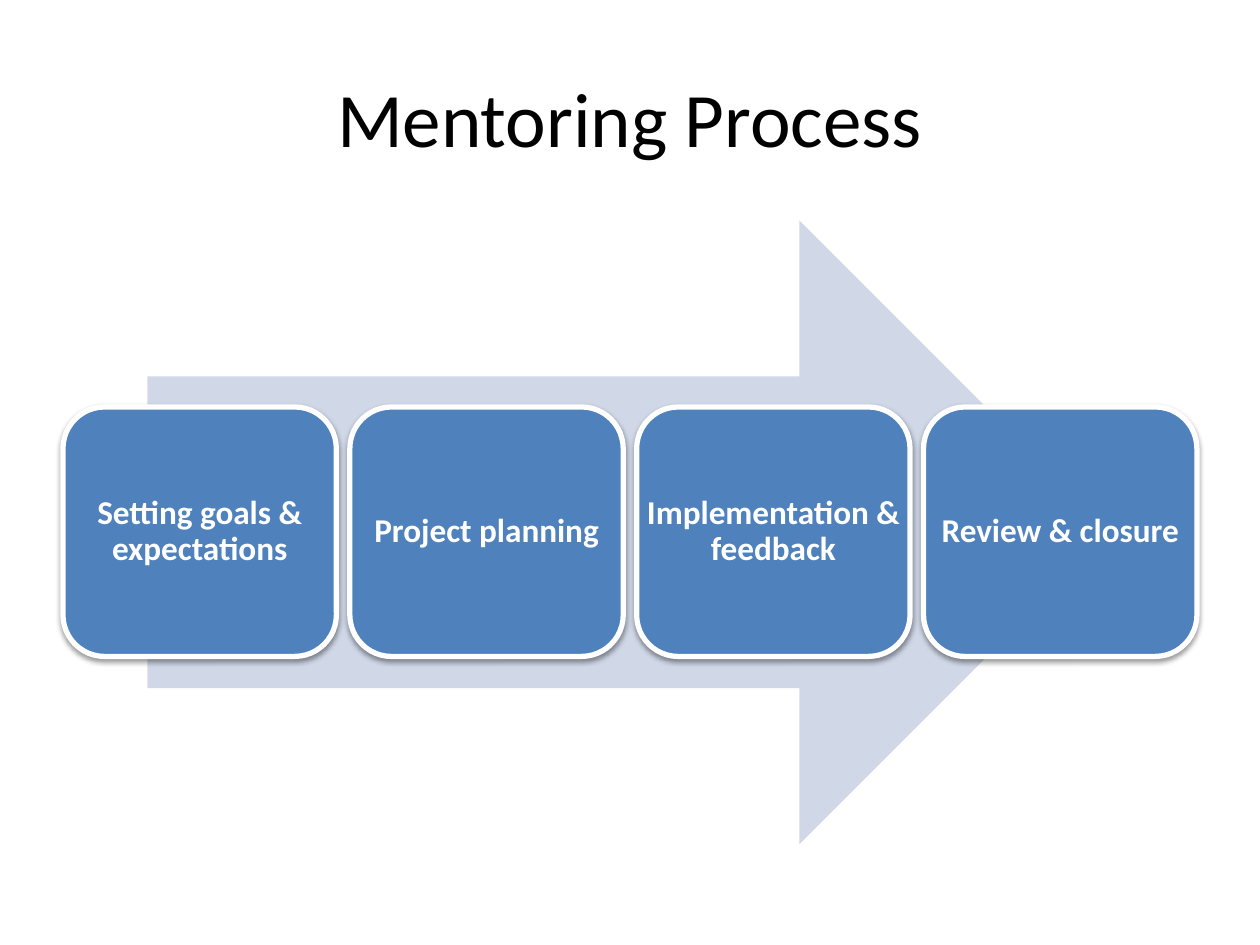
from dataclasses import dataclass

from lxml import etree
from pptx import Presentation
from pptx import util as u
from pptx.dml.color import RGBColor
from pptx.enum import shapes, text
from pptx.oxml import ns


@dataclass(frozen=True)
class Theme:
    """Colours, font and type sizes."""
    font: str = "Calibri"
    ink: str = "000000"
    paper: str = "FFFFFF"
    arrow: str = "D0D8E8"
    card: str = "4F81BD"
    head: int = 44
    label: int = 19


def write(frame, words, *, font, size, color, bold=False, space=1.0, pad=0.1):
    """Fill a text frame with one centred paragraph."""
    frame.word_wrap = True
    frame.vertical_anchor = text.MSO_ANCHOR.MIDDLE
    frame.margin_left = frame.margin_right = u.Inches(pad)
    frame.margin_top = frame.margin_bottom = u.Inches(pad)
    para = frame.paragraphs[0]
    para.alignment = text.PP_ALIGN.CENTER
    para.line_spacing = space
    run = para.add_run()
    run.text = words
    run.font.name = font
    run.font.size = u.Pt(size)
    run.font.bold = bold
    run.font.color.rgb = RGBColor.from_string(color)


def shade(shape, color, alpha, blur, dist):
    """Add a soft shadow that falls straight down."""
    list_ = etree.SubElement(shape._element.spPr, ns.qn("a:effectLst"))
    outer = etree.SubElement(
        list_, ns.qn("a:outerShdw"), blurRad=str(u.Pt(blur)),
        dist=str(u.Pt(dist)), dir="5400000", rotWithShape="0")
    tint = etree.SubElement(outer, ns.qn("a:srgbClr"), val=color)
    etree.SubElement(tint, ns.qn("a:alpha"), val=str(alpha * 1000))


class Deck:
    """Hold the style and the slide being built."""

    def __init__(self, prs, theme):
        """Start a title-only slide."""
        self.theme = theme
        self.slide = prs.slides.add_slide(prs.slide_layouts[5])
        self.group = self.slide.shapes.add_group_shape()

    def title(self, words, box):
        """Place and write the slide title."""
        shape = self.slide.shapes.title
        shape.left, shape.top, shape.width, shape.height = map(u.Inches, box)
        write(shape.text_frame, words, font=self.theme.font,
              size=self.theme.head, color=self.theme.ink)

    def shape(self, kind, box, fill):
        """Add a flat preset shape to the diagram."""
        shape = self.group.shapes.add_shape(kind, *map(u.Inches, box))
        shape.fill.solid()
        shape.fill.fore_color.rgb = RGBColor.from_string(fill)
        shape.line.fill.background()
        return shape

    def arrow(self, box):
        """Add the wide arrow behind the steps."""
        shape = self.shape(shapes.MSO_SHAPE.RIGHT_ARROW, box, self.theme.arrow)
        shape.shadow.inherit = False

    def card(self, words, box):
        """Add one step as a rounded card with its label."""
        shape = self.shape(shapes.MSO_SHAPE.ROUNDED_RECTANGLE, box, self.theme.card)
        shape.line.color.rgb = RGBColor.from_string(self.theme.paper)
        shape.line.width = u.Pt(3)
        shade(shape, self.theme.ink, alpha=38, blur=3.1, dist=1.6)
        label = self.group.shapes.add_textbox(*map(u.Inches, box))
        write(label.text_frame, words, font=self.theme.font,
              size=self.theme.label, color=self.theme.paper,
              bold=True, space=0.9, pad=0.07)


def main():
    """Build the mentoring process slide."""
    prs = Presentation()
    prs.slide_width, prs.slide_height = u.Inches(10), u.Inches(7.5)
    deck = Deck(prs, Theme())
    deck.title("Mentoring Process", (0.5, 0.3, 9, 1.25))
    deck.arrow((1.17, 1.75, 7.65, 4.95))
    steps = ("Setting goals & expectations", "Project planning",
             "Implementation & feedback", "Review & closure")
    left, span, wide = 0.5, 9, 2.17
    pitch = (span - wide) / (len(steps) - 1)
    for i, step in enumerate(steps):
        deck.card(step, (left + i * pitch, 3.23, wide, 1.98))
    prs.save("out.pptx")


if __name__ == "__main__":
    main()
